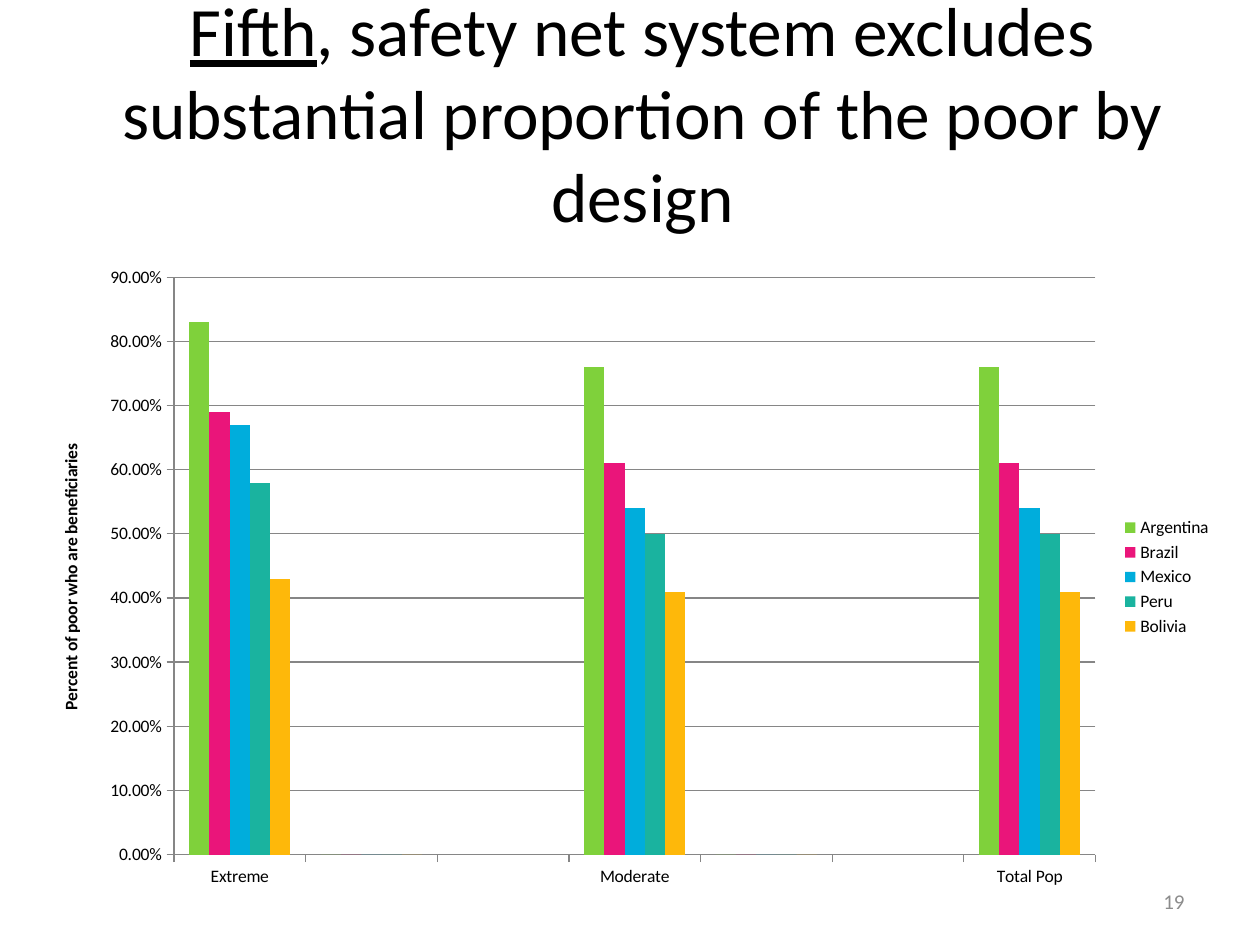
"""Build a slide charting safety net coverage of the poor in five countries."""
import pptx
import pptx.chart.data
import pptx.dml.color
import pptx.enum.chart
import pptx.enum.text
import pptx.util

Inches = pptx.util.Inches
Pt = pptx.util.Pt
RGBColor = pptx.dml.color.RGBColor
ALIGN = pptx.enum.text.PP_ALIGN
MIDDLE = pptx.enum.text.MSO_ANCHOR.MIDDLE

FONT = "Calibri"
BLACK = RGBColor(0x00, 0x00, 0x00)
GRAY = RGBColor(0x8C, 0x8C, 0x8C)
LINE_GRAY = RGBColor(0x86, 0x86, 0x86)

TITLE = [
    ("Fifth", True),
    (", safety net system excludes substantial proportion of the poor by design", False),
]
PAGE_NUMBER = "19"
AXIS_TITLE = "Percent of poor who are beneficiaries"
CATEGORIES = ["Extreme", "", "", "Moderate", "", "", "Total Pop"]
COUNTRIES = [
    ("Argentina", RGBColor(0x7F, 0xD1, 0x3B), (0.83, 0.76, 0.76)),
    ("Brazil", RGBColor(0xEA, 0x15, 0x7A), (0.69, 0.61, 0.61)),
    ("Mexico", RGBColor(0x00, 0xAD, 0xDC), (0.67, 0.54, 0.54)),
    ("Peru", RGBColor(0x1A, 0xB3, 0x9F), (0.58, 0.5, 0.5)),
    ("Bolivia", RGBColor(0xFE, 0xB8, 0x0A), (0.43, 0.41, 0.41)),
]


def style_font(font, size, color, bold=False):
    font.name = FONT
    font.size = Pt(size)
    font.bold = bold
    font.color.rgb = color


def add_span(para, text, size, color):
    span = para.add_run()
    span.text = text
    style_font(span.font, size, color)
    return span


def add_title(page):
    box = page.shapes.title
    box.left, box.top, box.width, box.height = map(Inches, (0.2, 0, 9.8, 1.78))
    frame = box.text_frame
    frame.auto_size = pptx.enum.text.MSO_AUTO_SIZE.NONE
    frame.vertical_anchor = MIDDLE
    para = frame.paragraphs[0]
    para.alignment = ALIGN.CENTER
    for text, underlined in TITLE:
        add_span(para, text, 39.6, BLACK).font.underline = underlined


def add_page_number(page):
    box = page.shapes.add_textbox(Inches(7.17), Inches(6.95), Inches(2.33), Inches(0.4))
    frame = box.text_frame
    frame.word_wrap = True
    frame.vertical_anchor = MIDDLE
    para = frame.paragraphs[0]
    para.alignment = ALIGN.RIGHT
    add_span(para, PAGE_NUMBER, 12, GRAY)


def add_coverage_chart(page):
    data = pptx.chart.data.CategoryChartData(number_format="0.00%")
    data.categories = CATEGORIES
    for name, _, (extreme, moderate, total) in COUNTRIES:
        data.add_series(name, (extreme, 0, None, moderate, 0, None, total))
    chart = page.shapes.add_chart(
        pptx.enum.chart.XL_CHART_TYPE.COLUMN_CLUSTERED,
        Inches(0.27), Inches(2.02), Inches(9.45), Inches(5.12), data,
    ).chart
    style_font(chart.font, 10, BLACK)
    chart.has_title = False
    chart.has_legend = True
    chart.legend.position = pptx.enum.chart.XL_LEGEND_POSITION.RIGHT
    chart.legend.include_in_layout = False

    plot = chart.plots[0]
    plot.gap_width = 150
    plot.vary_by_categories = False
    for series, (_, color, _) in zip(plot.series, COUNTRIES):
        series.format.fill.solid()
        series.format.fill.fore_color.rgb = color

    values = chart.value_axis
    values.minimum_scale, values.maximum_scale, values.major_unit = 0, 0.9, 0.1
    values.has_major_gridlines = True
    values.tick_labels.number_format = "0.00%"
    values.tick_labels.number_format_is_linked = False
    para = values.axis_title.text_frame.paragraphs[0]
    add_span(para, AXIS_TITLE, 10, BLACK).font.bold = True
    for axis in (values, chart.category_axis):
        axis.major_tick_mark = pptx.enum.chart.XL_TICK_MARK.OUTSIDE
    for part in (values, chart.category_axis, values.major_gridlines):
        part.format.line.color.rgb = LINE_GRAY
        part.format.line.width = Pt(0.75)


def main():
    deck = pptx.Presentation()
    deck.slide_width, deck.slide_height = Inches(10), Inches(7.5)
    page = deck.slides.add_slide(deck.slide_layouts[5])
    add_title(page)
    add_page_number(page)
    add_coverage_chart(page)
    deck.save("out.pptx")


if __name__ == "__main__":
    main()
